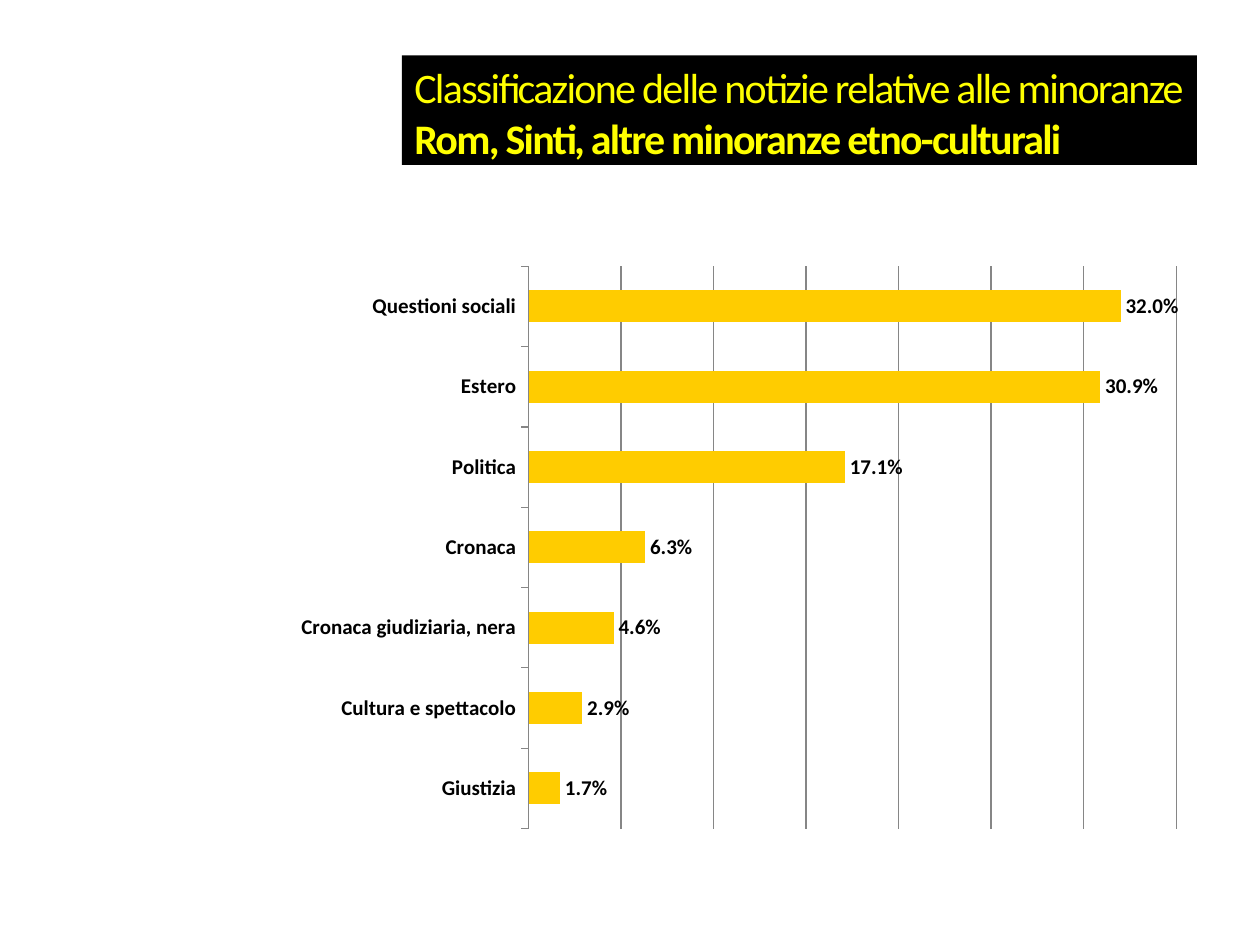
from lxml.etree import SubElement
from pptx import Presentation
from pptx.chart.data import CategoryChartData as ChartData
from pptx.dml.color import RGBColor
from pptx.enum.chart import XL_CHART_TYPE as ChartType
from pptx.enum.chart import XL_LABEL_POSITION as LabelPosition
from pptx.enum.chart import XL_TICK_LABEL_POSITION as TickLabelPosition
from pptx.enum.chart import XL_TICK_MARK as TickMark
from pptx.enum.shapes import MSO_SHAPE as Shape
from pptx.enum.text import MSO_ANCHOR as Anchor
from pptx.enum.text import PP_ALIGN as Align
from pptx.oxml.ns import qn
from pptx.util import Inches, Pt

BLACK = RGBColor(0x00, 0x00, 0x00)
YELLOW = RGBColor(0xFF, 0xFF, 0x00)
AMBER = RGBColor(0xFF, 0xCC, 0x00)
GREY = RGBColor(0x86, 0x86, 0x86)

NEWS_SHARES = {
    "Questioni sociali": 0.32,
    "Estero": 0.309,
    "Politica": 0.171,
    "Cronaca": 0.063,
    "Cronaca giudiziaria, nera": 0.046,
    "Cultura e spettacolo": 0.029,
    "Giustizia": 0.017,
}


class SlideBuilder:
    """Hold the slide and its style, and add each kind of element."""

    font_name = "Calibri"
    number_format = "0.0%"

    def __init__(self, slide):
        self.slide = slide

    def apply(self, target, values):
        for name, value in values.items():
            setattr(target, name, value)

    def style_font(self, font, color, **values):
        self.apply(font, {"name": self.font_name, **values})
        font.color.rgb = color

    def style_line(self, line):
        line.color.rgb = GREY
        line.width = Pt(0.75)

    def add_title(self, box, lines):
        shape = self.slide.shapes.add_shape(Shape.RECTANGLE, *map(Inches, box))
        shape.shadow.inherit = False
        shape.fill.solid()
        shape.fill.fore_color.rgb = BLACK
        shape.line.fill.background()
        frame = shape.text_frame
        self.apply(frame, {"word_wrap": True, "vertical_anchor": Anchor.TOP, "margin_right": 0})
        paragraph = frame.paragraphs[0]
        paragraph.alignment = Align.LEFT
        for index, (text, bold) in enumerate(lines):
            if index:
                paragraph.add_line_break()
            run = paragraph.add_run()
            run.text = text
            self.style_font(run.font, YELLOW, size=Pt(24), bold=bold)
            run.font._element.set("spc", "-100")

    def place_plot(self, chart, area):
        plot_area = chart._chartSpace.chart.plotArea
        layout = plot_area.find(qn("c:layout"))
        if layout is None:
            layout = SubElement(plot_area, qn("c:layout"))
            plot_area.insert(0, layout)
        manual = SubElement(layout, qn("c:manualLayout"))
        settings = {"layoutTarget": "inner", "xMode": "edge", "yMode": "edge", **area}
        for name, value in settings.items():
            SubElement(manual, qn(f"c:{name}")).set("val", str(value))

    def add_bar_chart(self, box, shares):
        data = ChartData(number_format=self.number_format)
        data.categories = list(shares)
        data.add_series("Series 1", list(shares.values()))
        frame = self.slide.shapes.add_chart(ChartType.BAR_CLUSTERED, *map(Inches, box), data)
        chart = frame.chart
        self.apply(chart, {"has_legend": False, "has_title": False})
        self.style_font(chart.font, BLACK, size=Pt(10))
        self.place_plot(chart, {"x": 0.27, "y": 0.02, "w": 0.71, "h": 0.96})

        plot = chart.plots[0]
        self.apply(plot, {"gap_width": 150, "vary_by_categories": False, "has_data_labels": True})
        fill = plot.series[0].format.fill
        fill.solid()
        fill.fore_color.rgb = AMBER
        labels = plot.data_labels
        self.apply(labels, {
            "show_value": True,
            "number_format": self.number_format,
            "number_format_is_linked": False,
            "position": LabelPosition.OUTSIDE_END,
        })
        self.style_font(labels.font, BLACK, size=Pt(12), bold=True)

        category_axis = chart.category_axis
        self.apply(category_axis, {
            "reverse_order": True,
            "major_tick_mark": TickMark.OUTSIDE,
            "tick_label_position": TickLabelPosition.LOW,
        })
        self.style_font(category_axis.tick_labels.font, BLACK, size=Pt(12), bold=True)
        self.style_line(category_axis.format.line)
        value_axis = chart.value_axis
        self.apply(value_axis, {
            "visible": False,
            "minimum_scale": 0,
            "maximum_scale": 0.35,
            "major_unit": 0.05,
            "has_major_gridlines": True,
        })
        self.style_line(value_axis.major_gridlines.format.line)


def main():
    presentation = Presentation()
    presentation.slide_width = Inches(10)
    presentation.slide_height = Inches(7.5)
    builder = SlideBuilder(presentation.slides.add_slide(presentation.slide_layouts[6]))
    builder.add_title((3.19, 0.44, 6.31, 0.87), [
        ("Classificazione delle notizie relative alle minoranze", False),
        ("Rom, Sinti, altre minoranze etno-culturali", True),
    ])
    builder.add_bar_chart((2.24, 2.02, 7.24, 4.65), NEWS_SHARES)
    presentation.save("out.pptx")


if __name__ == "__main__":
    main()
